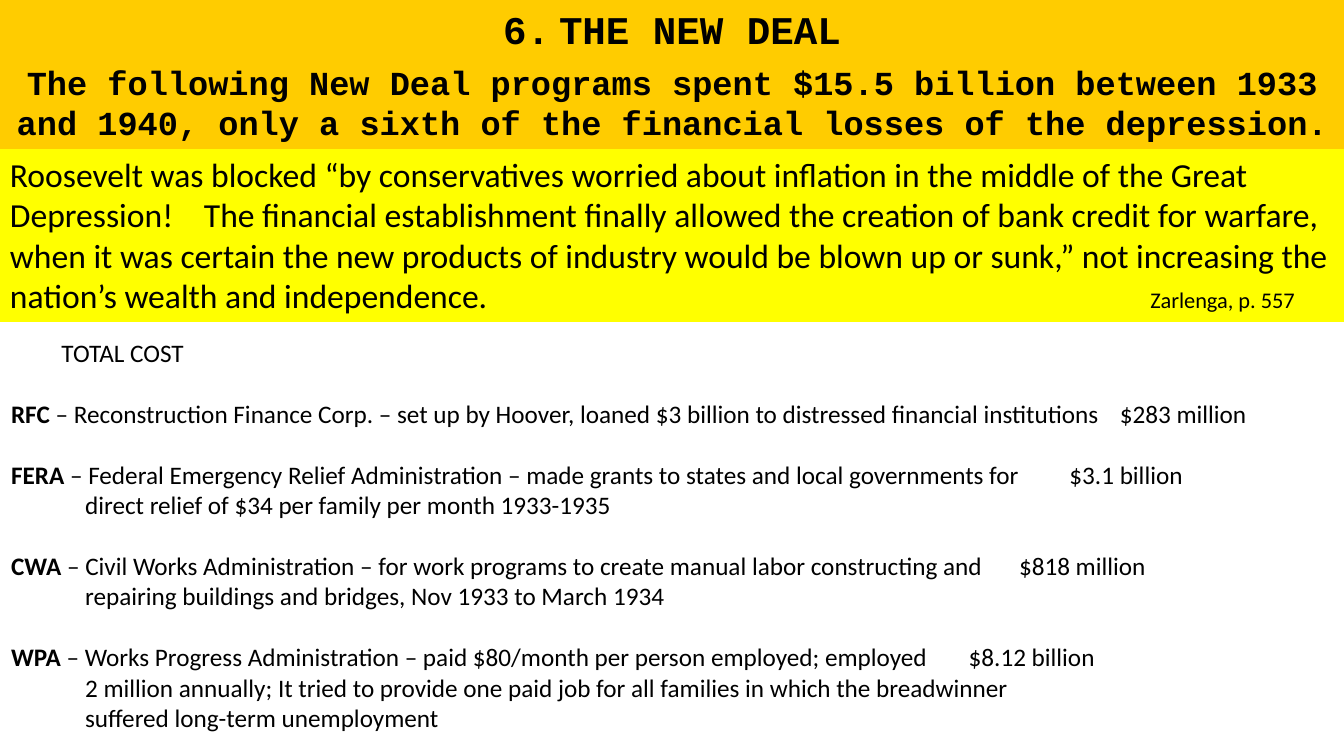
from lxml import etree
from pptx import Presentation
from pptx.dml.color import RGBColor
from pptx.enum.shapes import MSO_SHAPE
from pptx.enum.text import MSO_ANCHOR, MSO_AUTO_SIZE, PP_ALIGN
from pptx.oxml.ns import qn
from pptx.util import Pt

PX = 914400 / 100.8
SLIDE_W, SLIDE_H = 1344, 756

GOLD = RGBColor(0xFF, 0xCC, 0x00)
YELLOW = RGBColor(0xFF, 0xFF, 0x00)
BLACK = RGBColor(0x00, 0x00, 0x00)

RECTANGLE = MSO_SHAPE.RECTANGLE
TOP = MSO_ANCHOR.TOP
GROW = MSO_AUTO_SIZE.SHAPE_TO_FIT_TEXT
LEFT, CENTER = PP_ALIGN.LEFT, PP_ALIGN.CENTER

HEADING_FONT, BODY_FONT = "Courier New", "Calibri"
TITLE_INDENT = 56
DETAIL_INDENT = 74
COST_TAB = 1198
PROGRAM_GAP = Pt(22)

SUBTITLE = (
    "The following New Deal programs spent $15.5 billion between 1933 and 1940, "
    "only a sixth of the financial losses of the depression."
)
QUOTE = (
    "Roosevelt was blocked “by conservatives worried about inflation in the middle "
    "of the Great Depression!\tThe financial establishment finally allowed the "
    "creation of bank credit for warfare, when it was certain the new products of "
    "industry would be blown up or sunk,” not increasing the nation’s wealth and "
    "independence."
)
PROGRAMS = [
    ("RFC", "Reconstruction Finance Corp. – set up by Hoover, loaned $3 billion "
     "to distressed financial institutions", "$283 million", []),
    ("FERA", "Federal Emergency Relief Administration – made grants to states and "
     "local governments for", "$3.1 billion",
     ["direct relief of $34 per family per month 1933-1935"]),
    ("CWA", "Civil Works Administration – for work programs to create manual labor "
     "constructing and", "$818 million",
     ["repairing buildings and bridges, Nov 1933 to March 1934"]),
    ("WPA", "Works Progress Administration – paid $80/month per person employed; "
     "employed", "$8.12 billion",
     ["2 million annually; It tried to provide one paid job for all families in "
      "which the breadwinner",
      "suffered long-term unemployment"]),
]


def px(length):
    return round(length * PX)


def place(shape, left, top, width, height):
    shape.left, shape.top = px(left), px(top)
    shape.width, shape.height = px(width), px(height)


def prepare_frame(shape):
    frame = shape.text_frame
    frame.word_wrap = True
    frame.vertical_anchor = TOP
    frame.auto_size = GROW
    return frame


def fill_solid(shape, color):
    shape.fill.solid()
    shape.fill.fore_color.rgb = color


def set_font(font, name, size, bold=False):
    font.name, font.size, font.bold = name, Pt(size), bold
    font.color.rgb = BLACK


def set_indent(paragraph, margin, first_line=0):
    properties = paragraph._p.get_or_add_pPr()
    properties.set("marL", str(px(margin)))
    properties.set("indent", str(px(first_line)))
    return properties


def add_tabs(paragraph, stops):
    """Add (position, alignment) tab stops."""
    tabs = etree.SubElement(paragraph._p.get_or_add_pPr(), qn("a:tabLst"))
    for position, alignment in stops:
        etree.SubElement(tabs, qn("a:tab"), pos=str(px(position)), algn=alignment)


def add_band(slide, top, height, color, alignment):
    band = slide.shapes.add_shape(RECTANGLE, 0, px(top), px(SLIDE_W), px(height))
    band.shadow.inherit = False
    fill_solid(band, color)
    band.line.fill.background()
    paragraph = prepare_frame(band).paragraphs[0]
    paragraph.alignment = alignment
    return paragraph


def write_title(title):
    place(title, 0, 0, SLIDE_W, 57)
    fill_solid(title, GOLD)
    paragraph = prepare_frame(title).paragraphs[0]
    paragraph.alignment = CENTER
    properties = set_indent(paragraph, TITLE_INDENT, -TITLE_INDENT)
    etree.SubElement(properties, qn("a:buFont"), typeface=HEADING_FONT)
    etree.SubElement(properties, qn("a:buAutoNum"), type="arabicPeriod", startAt="6")
    paragraph.add_run().text = "THE NEW DEAL"
    set_font(paragraph.font, HEADING_FONT, 28, True)


def add_quote(slide):
    quote = add_band(slide, 149, 173, YELLOW, LEFT)
    add_tabs(quote, [(194, "l"), (1285, "r")])
    quote.add_run().text = QUOTE
    source = quote.add_run()
    source.text = "\tZarlenga, p. 557"
    source.font.size = Pt(16)
    set_font(quote.font, BODY_FONT, 24)


def write_line(paragraph, text, acronym="", indent=0, gap=0):
    paragraph.space_before = gap
    properties = set_indent(paragraph, indent)
    etree.SubElement(properties, qn("a:buNone"))
    if not indent:
        add_tabs(paragraph, [(COST_TAB, "ctr")])
    if acronym:
        name = paragraph.add_run()
        name.text = acronym
        name.font.bold = True
    paragraph.add_run().text = text
    set_font(paragraph.font, BODY_FONT, 18)


def write_programs(body):
    place(body, 1, 332, SLIDE_W, 407)
    frame = prepare_frame(body)
    write_line(frame.paragraphs[0], "\tTOTAL COST")
    for acronym, summary, cost, details in PROGRAMS:
        write_line(frame.add_paragraph(), f" – {summary}\t{cost}", acronym,
                   gap=PROGRAM_GAP)
        for detail in details:
            write_line(frame.add_paragraph(), detail, indent=DETAIL_INDENT)


def main():
    deck = Presentation()
    deck.slide_width, deck.slide_height = px(SLIDE_W), px(SLIDE_H)
    slide = deck.slides.add_slide(deck.slide_layouts[1])
    write_title(slide.shapes.title)
    subtitle = add_band(slide, 57, 92, GOLD, CENTER)
    subtitle.add_run().text = SUBTITLE
    set_font(subtitle.font, HEADING_FONT, 24, True)
    add_quote(slide)
    write_programs(slide.placeholders[1])
    deck.save("out.pptx")


if __name__ == "__main__":
    main()
